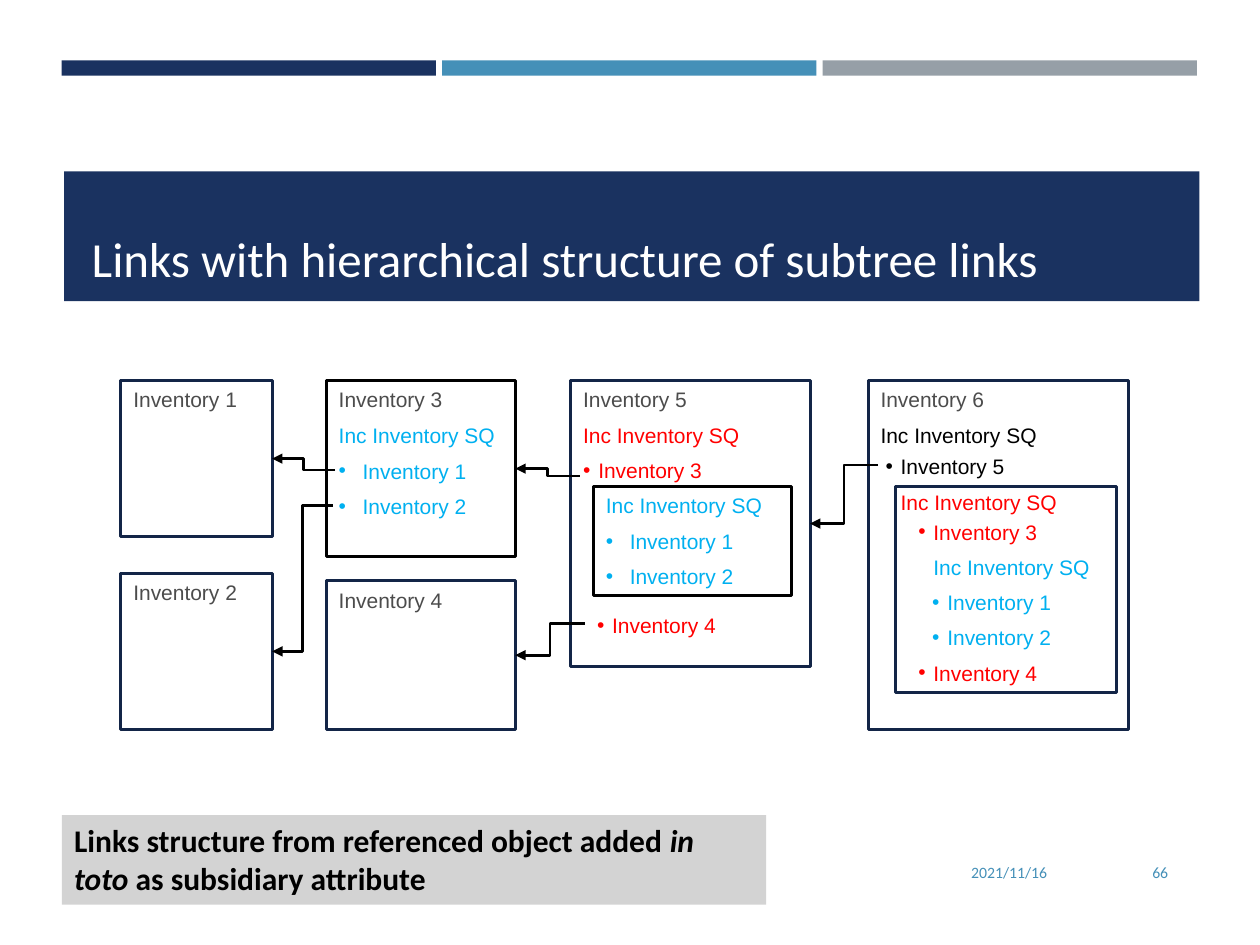
from lxml import etree
from pptx import Presentation
from pptx import util as u
from pptx.dml.color import RGBColor
from pptx.enum import shapes, text
from pptx.oxml import ns

NAVY = RGBColor(0x1A, 0x32, 0x60)
EDGE = RGBColor(0x13, 0x25, 0x47)
TEAL = RGBColor(0x45, 0x90, 0xB8)
SLATE = RGBColor(0x96, 0x9F, 0xA7)
PALE = RGBColor(0xD3, 0xD3, 0xD3)
GRAY = RGBColor(0x4C, 0x4C, 0x4C)
BLUE = RGBColor(0x00, 0xB0, 0xF0)
RED = RGBColor(0xFF, 0x00, 0x00)
BLACK = RGBColor(0, 0, 0)
WHITE = RGBColor(0xFF, 0xFF, 0xFF)

# Diagram grid: (left, width) of each column, and the shared top and bottom
COLS = [(0.96, 1.2), (2.59, 1.5), (4.53, 1.9), (6.89, 2.07)]
TOP, BOTTOM = 3.02, 5.79
INNER_TOP = 3.86
SQ = "Inc Inventory SQ"


def add_text(tf, txt, color=BLACK, size=12, font="Arial", bold=False, italic=(),
             align=text.PP_ALIGN.LEFT, after=0, margin=0, bullet=False):
    """Add a paragraph; txt is a string or a list of runs, italic their indexes."""
    p = tf.paragraphs[0]
    if p.runs:
        p = tf.add_paragraph()
    p.alignment = align
    p.space_after = u.Pt(after)
    pPr = p._p.get_or_add_pPr()
    if margin:
        pPr.set("marL", str(u.Inches(margin)))
    if bullet:
        pPr.set("indent", str(-u.Inches(margin)))
        etree.SubElement(pPr, ns.qn("a:buFont")).set("typeface", "Arial")
        etree.SubElement(pPr, ns.qn("a:buChar")).set("char", "•")
    for i, part in enumerate([txt] if isinstance(txt, str) else txt):
        r = p.add_run()
        r.text = part
        r.font.name, r.font.size = font, u.Pt(size)
        r.font.bold, r.font.italic = bold, i in italic
        r.font.color.rgb = color


def add_rect(s, left, top, width, height, fill=None, line=None):
    sp = s.shapes.add_shape(shapes.MSO_SHAPE.RECTANGLE,
                            *map(u.Inches, (left, top, width, height)))
    sp.shadow.inherit = False
    if fill is None:
        sp.fill.background()
    else:
        sp.fill.solid()
        sp.fill.fore_color.rgb = fill
    if line is None:
        sp.line.fill.background()
    else:
        sp.line.color.rgb = line
        sp.line.width = u.Pt(1.75)
    sp.text_frame.word_wrap = True
    sp.text_frame.vertical_anchor = text.MSO_ANCHOR.TOP
    return sp


def add_label(s, left, top, width, height, anchor=text.MSO_ANCHOR.TOP):
    tf = s.shapes.add_textbox(*map(u.Inches, (left, top, width, height))).text_frame
    tf.word_wrap = True
    tf.vertical_anchor = anchor
    return tf


def add_object(s, col, name, top=TOP, bottom=BOTTOM, line=EDGE):
    """Add an inventory box in a column of the grid, headed by its name."""
    left, width = COLS[col]
    sp = add_rect(s, left, top, width, bottom - top, line=line)
    add_text(sp.text_frame, name, GRAY, after=6)
    return sp


def add_subtree(tf):
    """Add the blue sequence that lists Inventory 1 and 2."""
    add_text(tf, SQ, BLUE, after=6)
    for n in (1, 2):
        add_text(tf, f"Inventory {n}", BLUE, after=6, margin=0.19, bullet=True)


def add_item(s, left, top, width, name, color, sub=None):
    """Add a loose bullet, with an optional (text, colour) line below it."""
    tf = add_label(s, left, top, width, 0.58 if sub else 0.3)
    add_text(tf, name, color, after=6, margin=0.12, bullet=True)
    if sub:
        add_text(tf, *sub, margin=0.12)


def add_link(s, x, y, target):
    """Draw an elbow arrow from (x, y) to the right side of the target box."""
    c = s.shapes.add_connector(
        shapes.MSO_CONNECTOR.ELBOW, u.Inches(x), u.Inches(y),
        target.left + target.width, target.top + target.height // 2)
    c.end_connect(target, 3)
    c.line.color.rgb = BLACK
    c.line.width = u.Pt(1.5)
    etree.SubElement(c.line._get_or_add_ln(), ns.qn("a:tailEnd")).set("type", "triangle")
    etree.SubElement(c._element.spPr, ns.qn("a:effectLst"))


def add_frame(s):
    for i, color in enumerate((NAVY, TEAL, SLATE)):
        add_rect(s, 0.49 + 3.02 * i, 0.48, 2.97, 0.12, fill=color)
    add_rect(s, 0.51, 1.36, 9.01, 1.03, fill=NAVY)
    title = add_label(s, 0.63, 1.42, 8.74, 0.91, text.MSO_ANCHOR.BOTTOM)
    add_text(title, "Links with hierarchical structure of subtree links",
             WHITE, 28, "Calibri")
    note = add_rect(s, 0.49, 6.47, 5.59, 0.71, fill=PALE)
    add_text(note.text_frame,
             ["Links structure from referenced object added ", "in toto ",
              "as subsidiary attribute"],
             size=18, font="Calibri", bold=True, italic=(1,))
    for left, width, txt in ((6.08, 2.33, "2021/11/16"), (8.53, 0.84, "66")):
        tf = add_label(s, left, 6.72, width, 0.4, text.MSO_ANCHOR.MIDDLE)
        add_text(tf, txt, TEAL, 9, "Calibri", align=text.PP_ALIGN.RIGHT)


def add_diagram(s):
    inv1 = add_object(s, 0, "Inventory 1", bottom=4.26)
    inv2 = add_object(s, 0, "Inventory 2", top=4.55)
    inv3 = add_object(s, 1, "Inventory 3", bottom=4.42, line=BLACK)
    add_subtree(inv3.text_frame)
    inv4 = add_object(s, 1, "Inventory 4", top=4.61)

    inv5 = add_object(s, 2, "Inventory 5", bottom=5.29)
    add_text(inv5.text_frame, SQ, RED)
    add_item(s, 4.53, 3.58, 1.76, "Inventory 3", RED)
    add_subtree(add_rect(s, 4.71, INNER_TOP, 1.57, 0.87, line=BLACK).text_frame)
    add_item(s, 4.64, 4.81, 1.37, "Inventory 4", RED)

    inv6 = add_object(s, 3, "Inventory 6")
    add_text(inv6.text_frame, SQ)
    add_rect(s, 7.11, INNER_TOP, 1.75, 1.64, line=EDGE)
    add_item(s, 6.93, 3.55, 1.98, "Inventory 5", BLACK, (SQ, RED))
    add_item(s, 7.19, 4.07, 1.63, "Inventory 3", RED, (SQ, BLUE))
    for n in (1, 2):
        add_item(s, 7.3, 4.35 + 0.28 * n, 1.19, f"Inventory {n}", BLUE)
    add_item(s, 7.19, 5.19, 1.37, "Inventory 4", RED)

    for x, y, target in ((2.66, 3.73, inv1), (2.64, 4.01, inv2), (4.6, 3.78, inv3),
                         (4.64, 4.95, inv4), (6.97, 3.69, inv5)):
        add_link(s, x, y, target)


def main():
    prs = Presentation()
    prs.slide_width, prs.slide_height = u.Inches(10), u.Inches(7.5)
    s = prs.slides.add_slide(prs.slide_layouts[6])
    add_frame(s)
    add_diagram(s)
    prs.save("out.pptx")


if __name__ == "__main__":
    main()
